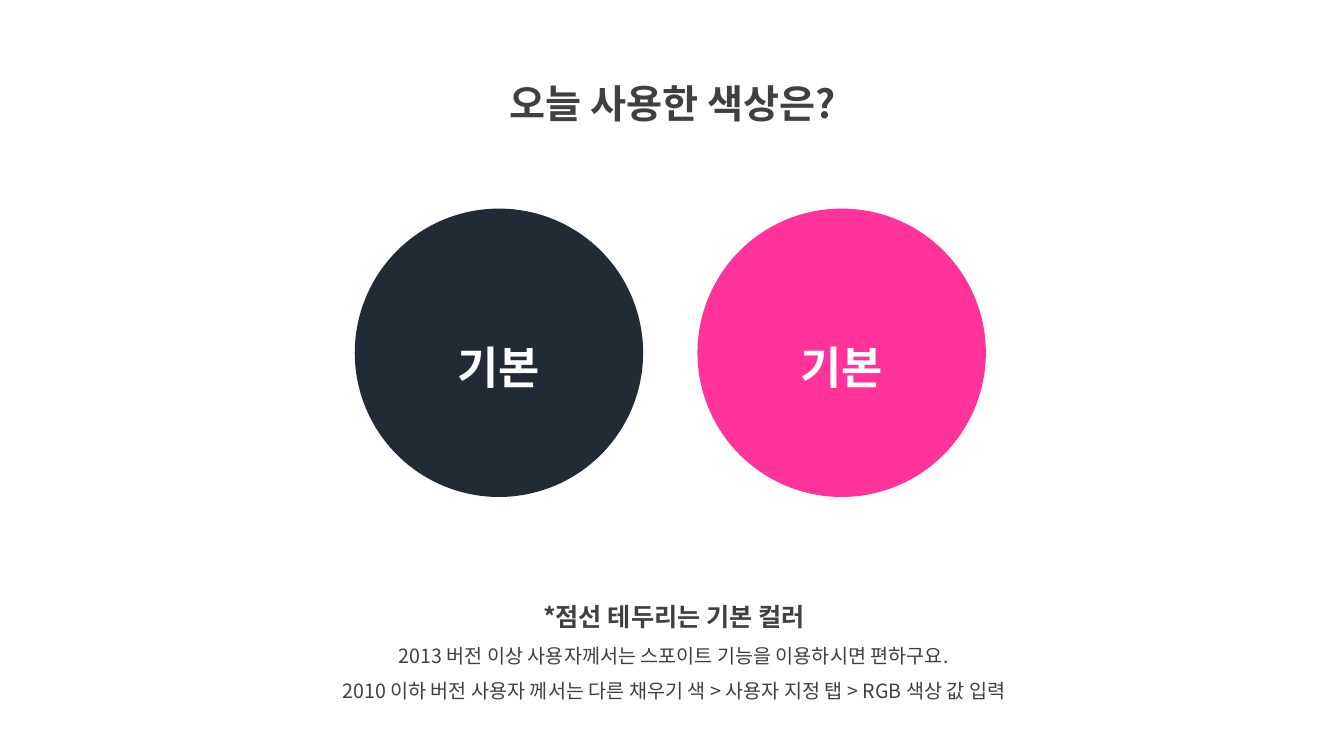
from dataclasses import dataclass

from lxml import etree
from pptx import Presentation
from pptx.dml.color import RGBColor
from pptx.enum import shapes, text
from pptx.oxml.ns import qn
from pptx.util import Pt


@dataclass(frozen=True)
class Theme:
    font: str = "Noto Sans CJK KR"
    ink: str = "404040"
    white: str = "FFFFFF"
    title: int = 28
    heading: int = 18
    body: int = 14
    label: int = 32
    line_spacing: float = 1.5


THEME = Theme()

TITLE = "오늘 사용한 색상은?"
SWATCHES = [("기본", "222A35"), ("기본", "FF3399")]
NOTES_HEADING = "*점선 테두리는 기본 컬러"
NOTES = [
    "2013 버전 이상 사용자께서는 스포이트 기능을 이용하시면 편하구요.",
    "2010 이하 버전 사용자 께서는 다른 채우기 색 > 사용자 지정 탭 > RGB 색상 값 입력",
]

SLIDE_SIZE = (960, 540)
TITLE_BOX = (313.9, 36, 333.4, 51.8)
NOTES_BOX = (193.7, 415.4, 575.3, 90.7)
SWATCH_LEFT, SWATCH_TOP, SWATCH_SIZE, SWATCH_GAP = 253.4, 149, 206, 38.8


def write_lines(frame, lines, color):
    """Fill a text frame with centred (wording, size, bold) lines."""
    frame.word_wrap = True
    for index, (wording, size, bold) in enumerate(lines):
        paragraph = frame.add_paragraph() if index else frame.paragraphs[0]
        paragraph.text = wording
        paragraph.alignment = text.PP_ALIGN.CENTER
        paragraph.line_spacing = THEME.line_spacing
        font = paragraph.font
        font.name = THEME.font
        font.size = Pt(size)
        font.bold = bold
        font.color.rgb = RGBColor.from_string(color)
        # Korean glyphs take the East Asian typeface, which follows latin.
        latin = paragraph._p.pPr.find(qn("a:defRPr")).find(qn("a:latin"))
        latin.addnext(etree.Element(qn("a:ea"), typeface=THEME.font))


def add_text(slide, box, lines):
    shape = slide.shapes.add_textbox(*map(Pt, box))
    write_lines(shape.text_frame, lines, THEME.ink)


def add_swatch(slide, left, label, color):
    shape = slide.shapes.add_shape(
        shapes.MSO_SHAPE.OVAL,
        *map(Pt, (left, SWATCH_TOP, SWATCH_SIZE, SWATCH_SIZE)))
    shape.shadow.inherit = False
    shape.fill.solid()
    shape.fill.fore_color.rgb = RGBColor.from_string(color)
    shape.line.fill.background()
    shape.text_frame.vertical_anchor = text.MSO_ANCHOR.MIDDLE
    write_lines(shape.text_frame, [(label, THEME.label, True)], THEME.white)


def main():
    presentation = Presentation()
    presentation.slide_width, presentation.slide_height = map(Pt, SLIDE_SIZE)
    slide = presentation.slides.add_slide(presentation.slide_layouts[6])

    add_text(slide, TITLE_BOX, [(TITLE, THEME.title, True)])
    add_text(slide, NOTES_BOX, [
        (NOTES_HEADING, THEME.heading, True),
        *((note, THEME.body, False) for note in NOTES),
    ])
    for index, (label, color) in enumerate(SWATCHES):
        left = SWATCH_LEFT + index * (SWATCH_SIZE + SWATCH_GAP)
        add_swatch(slide, left, label, color)

    presentation.save("out.pptx")


if __name__ == "__main__":
    main()
